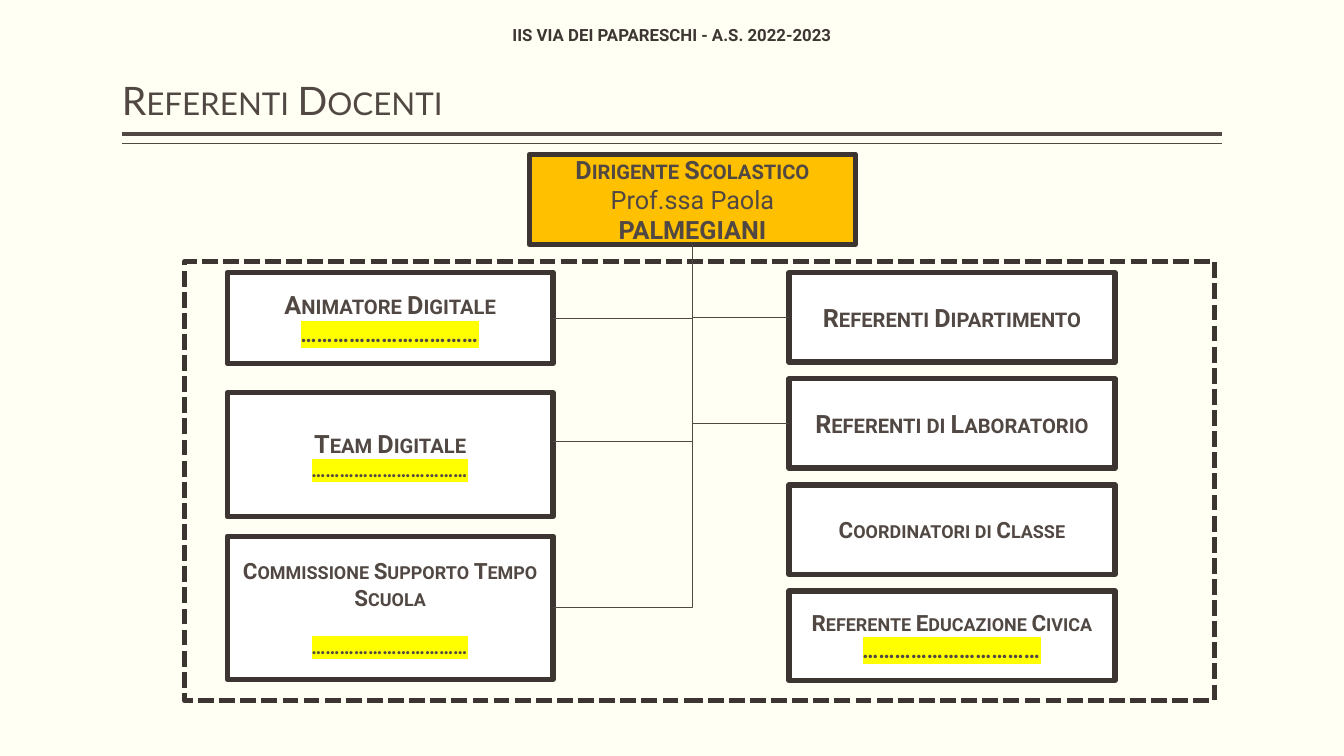
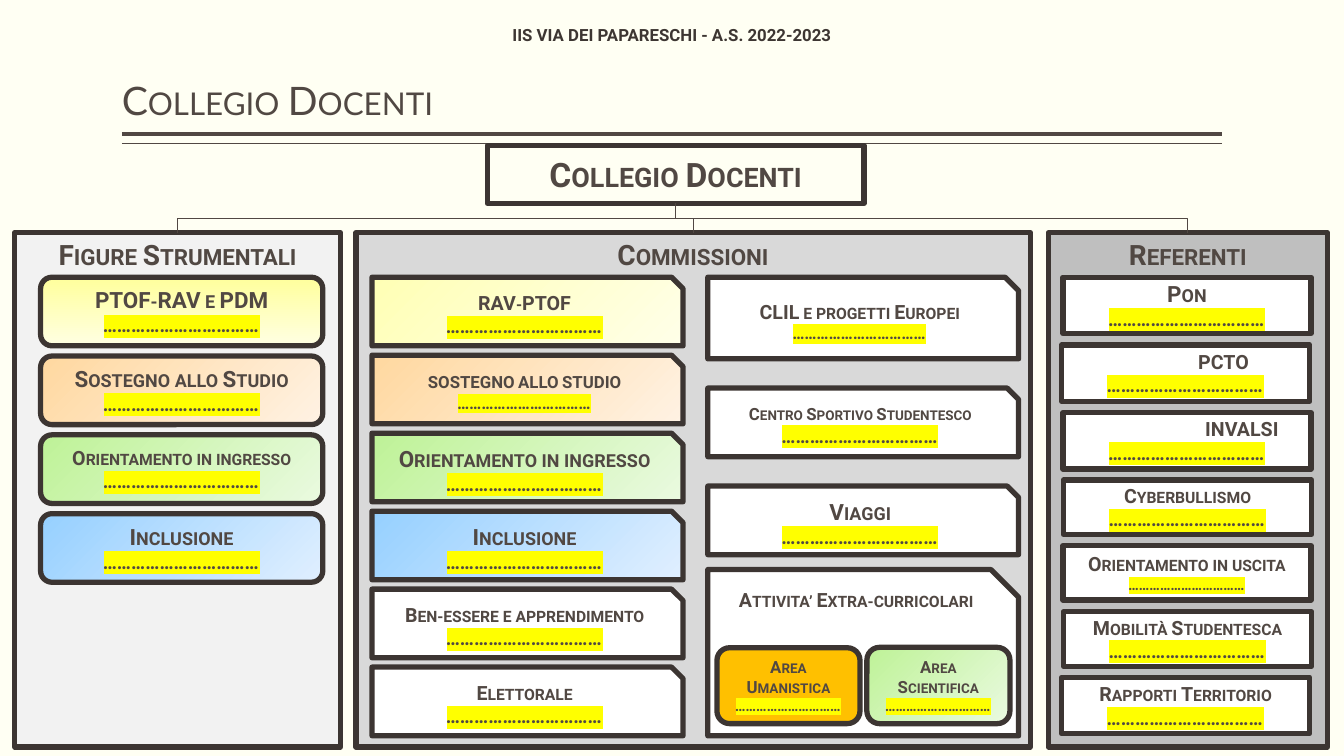
from lxml import etree
from pptx import Presentation
from pptx.dml.color import RGBColor
from pptx.enum.dml import MSO_LINE
from pptx.enum.shapes import MSO_CONNECTOR, MSO_SHAPE
from pptx.enum.text import MSO_ANCHOR, MSO_AUTO_SIZE, PP_ALIGN
from pptx.oxml.ns import qn
from pptx.util import Pt

RECT, ROUND = MSO_SHAPE.RECTANGLE, MSO_SHAPE.ROUNDED_RECTANGLE
SNIP = MSO_SHAPE.SNIP_1_RECTANGLE
STRAIGHT, ELBOW = MSO_CONNECTOR.STRAIGHT, MSO_CONNECTOR.ELBOW
ONE_BEND, TWO_BENDS = "bentConnector2", "bentConnector3"
DASHED = MSO_LINE.SQUARE_DOT
TOP, MIDDLE, BOTTOM = MSO_ANCHOR.TOP, MSO_ANCHOR.MIDDLE, MSO_ANCHOR.BOTTOM
LEFT, CENTER = PP_ALIGN.LEFT, PP_ALIGN.CENTER
NO_FIT = MSO_AUTO_SIZE.NONE
SITE_TOP, SITE_LEFT, SITE_BOTTOM, SITE_RIGHT = range(4)

CREAM = RGBColor(0xFF, 0xFF, 0xF3)
INK = RGBColor(0x51, 0x48, 0x43)
BORDER = RGBColor(0x3C, 0x35, 0x32)
HEADER_INK = RGBColor(0x3D, 0x36, 0x32)
WHITE = RGBColor(0xFF, 0xFF, 0xFF)
AMBER = RGBColor(0xFF, 0xC0, 0x00)
GRAYS = [RGBColor(v, v, v) for v in (0xF2, 0xD9, 0xBF)]
HIGHLIGHT = "FFFF00"
# Gradients: first colour, last colour, clockwise angle
YELLOW = (RGBColor(0xFF, 0xFF, 0x9C), RGBColor(0xFF, 0xFF, 0xE2), 90)
PALE_YELLOW = (RGBColor(0xFF, 0xFF, 0xB5), RGBColor(0xFF, 0xFF, 0xE8), 45)
ORANGE = (RGBColor(0xFF, 0xD8, 0xA0), RGBColor(0xFF, 0xF2, 0xE3), 45)
GREEN = (RGBColor(0xBE, 0xF2, 0x97), RGBColor(0xEA, 0xFA, 0xE0), 45)
BLUE = (RGBColor(0x96, 0xD0, 0xFF), RGBColor(0xE0, 0xEF, 0xFF), 45)

TITLE_FONT, BODY_FONT = "Lato", "Roboto"
SLIDE_W, SLIDE_H = 960, 540
RULE_X1, RULE_X2 = 87, 873
RULES = [(96, 3), (102.7, 1)]  # top, weight
HEADER = "IIS VIA DEI PAPARESCHI - A.S. 2022-2023"
DOTS = "……………………………"
SHORT_DOTS = "…………………………"

# Slide 1: top, height, label, label size, dots size, space before dots, branch y
DIGITAL_TEAMS = [
    (194.6, 65, "Animatore Digitale", 18, 16, 0, None),
    (280.6, 88.4, "Team Digitale", 18, 14, 0, 314.9),
    (383, 102.4, "Commissione Supporto Tempo Scuola", 16, 14, 17, None),
]
# label, label size, dots size, linked to the head
CONTACTS = [
    ("Referenti Dipartimento", 18, 0, True),
    ("Referenti di Laboratorio", 18, 0, True),
    ("Coordinatori di Classe", 16, 0, False),
    ("Referente Educazione Civica", 16, 16, False),
]

# Slide 2: left, width, heading
PANELS = [
    (10.6, 232.6, "Figure Strumentali"),
    (254.2, 481.7, "Commissioni"),
    (748.8, 199.4, "Referenti"),
]
# label, label size, dots size, fill
FUNCTIONS = [
    ("PTOF-RAV e PDM", 16, 14, YELLOW),
    ("Sostegno allo Studio", 16, 14, ORANGE),
    ("Orientamento in ingresso", 14, 14, GREEN),
    ("Inclusione", 16, 14, BLUE),
]
COMMITTEES = [
    ("RAV-PTOF", 14, 14, PALE_YELLOW),
    ("SOSTEGNO ALLO STUDIO", 12, 12, ORANGE),
    ("Orientamento in ingresso", 16, 14, GREEN),
    ("Inclusione", 16, 14, BLUE),
    ("Ben-essere e apprendimento", 14, 14, WHITE),
    ("Elettorale", 14, 14, WHITE),
]
# top, height, label, label size, dots size, anchor
PROJECTS = [
    (198, 58.3, "CLIL e progetti Europei", 14, 12, MIDDLE),
    (277.2, 49, "Centro Sportivo Studentesco", 12, 14, MIDDLE),
    (347.2, 49, "Viaggi", 16, 14, MIDDLE),
    (406.8, 118.8, "Attivita’ Extra-curricolari", 14, 0, TOP),
]
AREAS = [("Area Umanistica", AMBER), ("Area Scientifica", GREEN)]
# left, top, height, label, label size, dots size, label indent
REFERENTS = [
    (759.2, 198, 40.3, "Pon", 16, 14, 0),
    (758.2, 246.4, 40.3, "PCTO", 14, 14, 18),
    (759.2, 294.8, 40.3, "INVALSI", 14, 14, 26),
    (759.6, 342.9, 38.9, "Cyberbullismo", 14, 14, 0),
    (759.2, 389.7, 38.9, "Orientamento in uscita", 14, 10.5, 0),
    (759.6, 437, 38.9, "Mobilità Studentesca", 14, 14, 0),
    (758.2, 483.8, 40.3, "Rapporti Territorio", 14, 14, 0),
]


def style(r, size, font=BODY_FONT, color=INK, bold=True, caps=False):
    r.font.size, r.font.name, r.font.bold = Pt(size), font, bold
    r.font.color.rgb = color
    if caps:
        r._r.get_or_add_rPr().set("cap", "small")


def highlight(r):
    fill = r._r.get_or_add_rPr().find(qn("a:solidFill"))
    mark = etree.Element(qn("a:highlight"))
    etree.SubElement(mark, qn("a:srgbClr")).set("val", HIGHLIGHT)
    fill.addnext(mark)


def set_frame(tf, anchor):
    tf.word_wrap, tf.auto_size, tf.vertical_anchor = True, NO_FIT, anchor


def set_fill(sp, fill):
    """Fill with nothing, a colour, or a (first, last, angle) gradient."""
    if fill is None:
        sp.fill.background()
    elif isinstance(fill, RGBColor):
        sp.fill.solid()
        sp.fill.fore_color.rgb = fill
    else:
        sp.fill.gradient()
        sp.fill.gradient_angle = 360 - fill[2]
        for stop, color in zip(sp.fill.gradient_stops, fill):
            stop.color.rgb = color


def add_box(s, rect, label="", size=14, fill=WHITE, shape=RECT, anchor=MIDDLE,
            dots_size=0, dots=DOTS, dots_gap=0, indent=0):
    """Bordered box with a small-caps label and, if sized, a highlighted dotted line."""
    sp = s.shapes.add_shape(shape, *map(Pt, rect))
    sp.shadow.inherit = False
    set_fill(sp, fill)
    sp.line.color.rgb, sp.line.width = BORDER, Pt(3.78)
    tf = sp.text_frame
    set_frame(tf, anchor)
    if label:
        p = tf.paragraphs[0]
        p.text, p.alignment = label, CENTER
        style(p.runs[0], size, caps=True)
        if indent:
            p._p.get_or_add_pPr().set("marL", str(Pt(indent)))
    if dots_size:
        p = tf.add_paragraph()
        p.text, p.alignment, p.space_before = dots, CENTER, Pt(dots_gap)
        r = p.runs[0]
        style(r, dots_size)
        r.font.italic = True
        highlight(r)
    return sp


def style_line(c, weight):
    c.line.color.rgb, c.line.width = INK, Pt(weight)
    etree.SubElement(c._element.spPr, qn("a:effectLst"))


def add_elbow(s, bends, x1, y1, x2, y2, begin, end=None):
    """Elbow that leaves (x1, y1) downwards; begin and end are (shape, site) joints."""
    c = s.shapes.add_connector(ELBOW, Pt(x1), Pt(y1), Pt(x2), Pt(y2))
    c.begin_connect(*begin)
    if end:
        c.end_connect(*end)
    spPr = c._element.spPr
    spPr.find(qn("a:prstGeom")).set("prst", bends)
    # The unrotated frame lies on its side around the same centre
    w, h = y2 - y1, abs(x2 - x1)
    c.left, c.top = Pt((x1 + x2 - w) / 2), Pt((y1 + y2 - h) / 2)
    c.width, c.height = Pt(w), Pt(h)
    xfrm = spPr.find(qn("a:xfrm"))
    turn, flip = (90, "0") if x2 < x1 else (270, "1")
    xfrm.set("rot", str(turn * 60000))
    xfrm.set("flipH", flip)
    style_line(c, 0.5)


def add_titled_slide(prs, title):
    """Title-only slide with its double rule and the school header."""
    s = prs.slides.add_slide(prs.slide_layouts[5])
    for y, weight in RULES:
        c = s.shapes.add_connector(STRAIGHT, Pt(RULE_X1), Pt(y), Pt(RULE_X2), Pt(y))
        style_line(c, weight)
    sp = s.shapes.title
    sp.left, sp.top = Pt(RULE_X1), Pt(5.8)
    sp.width, sp.height = Pt(RULE_X2 - RULE_X1), Pt(86.4)
    header = s.shapes.add_textbox(0, Pt(10.8), Pt(SLIDE_W), Pt(28.8))
    for shape, text, anchor, align in ((sp, title, BOTTOM, LEFT),
                                       (header, HEADER, MIDDLE, CENTER)):
        tf = shape.text_frame
        set_frame(tf, anchor)
        tf.margin_left = tf.margin_right = 0
        p = tf.paragraphs[0]
        p.text, p.alignment = text, align
    p = sp.text_frame.paragraphs[0]
    p.line_spacing = 0.9
    style(p.runs[0], 28, TITLE_FONT, bold=False, caps=True)
    style(header.text_frame.paragraphs[0].runs[0], 12, color=HEADER_INK)
    return s


def build_referents_slide(prs):
    s = add_titled_slide(prs, "Referenti Docenti")
    box_w, left_x, right_x = 232.8, 162.3, 563.6
    head_x, head_y, head_h = 378.2, 110.2, 64.4
    trunk_x, trunk_y = head_x + box_w / 2, head_y + head_h
    frame = add_box(s, (132, 186.7, 735.3, 313.9), fill=None)
    frame.line.dash_style = DASHED

    head = add_box(s, (head_x, head_y, box_w, head_h), "Dirigente Scolastico", 18, AMBER)
    p = head.text_frame.add_paragraph()
    p.alignment = CENTER
    for text, bold in (("Prof.ssa Paola ", False), ("PALMEGIANI", True)):
        r = p.add_run()
        r.text = text
        style(r, 18, bold=bold)

    start = (head, SITE_BOTTOM)
    for y, h, label, size, dots_size, gap, branch_y in DIGITAL_TEAMS:
        sp = add_box(s, (left_x, y, box_w, h), label, size,
                     dots_size=dots_size, dots_gap=gap)
        add_elbow(s, ONE_BEND, trunk_x, trunk_y, left_x + box_w, branch_y or y + h / 2,
                  start, None if branch_y else (sp, SITE_RIGHT))

    top, pitch, h = 194.8, 75.8, 63.8
    for i, (label, size, dots_size, linked) in enumerate(CONTACTS):
        y = top + i * pitch
        sp = add_box(s, (right_x, y, box_w, h), label, size, dots_size=dots_size)
        if linked:
            add_elbow(s, ONE_BEND, trunk_x, trunk_y, right_x, y + h / 2,
                      start, (sp, SITE_LEFT))


def build_board_slide(prs):
    s = add_titled_slide(prs, "Collegio Docenti")
    board_x, board_y, board_w, board_h = 348, 104, 269.3, 41.2
    panel_y, panel_h, top = 166.3, 367.3, 198
    board = add_box(s, (board_x, board_y, board_w, board_h), "Collegio Docenti", 24, None)
    for (x, w, heading), gray in zip(PANELS, GRAYS):
        panel = add_box(s, (x, panel_y, w, panel_h), heading, 20, gray, anchor=TOP)
        add_elbow(s, TWO_BENDS, board_x + board_w / 2, board_y + board_h,
                  x + w / 2, panel_y, (board, SITE_BOTTOM), (panel, SITE_TOP))

    for items, shape, x, w, pitch in ((FUNCTIONS, ROUND, 29, 201.6, 56.3),
                                      (COMMITTEES, SNIP, 265.7, 222.2, 55.7)):
        for i, (label, size, dots_size, fill) in enumerate(items):
            add_box(s, (x, top + i * pitch, w, 49), label, size, fill, shape,
                    dots_size=dots_size)
    for y, h, label, size, dots_size, anchor in PROJECTS:
        add_box(s, (505.6, y, 222, h), label, size, shape=SNIP, anchor=anchor,
                dots_size=dots_size)
    for i, (label, fill) in enumerate(AREAS):
        add_box(s, (512.1, 462.7, 102.2, 54.2) if i == 0 else (619.2, 462.4, 102.2, 54.5),
                label, 12, fill, ROUND, dots_size=10.5, dots=SHORT_DOTS)
    for x, y, h, label, size, dots_size, indent in REFERENTS:
        add_box(s, (x, y, 177.3, h), label, size, dots_size=dots_size, indent=indent)


def main():
    prs = Presentation()
    prs.slide_width, prs.slide_height = Pt(SLIDE_W), Pt(SLIDE_H)
    background = prs.slide_master.background.fill
    background.solid()
    background.fore_color.rgb = CREAM
    build_referents_slide(prs)
    build_board_slide(prs)
    prs.save("out.pptx")


if __name__ == "__main__":
    main()
